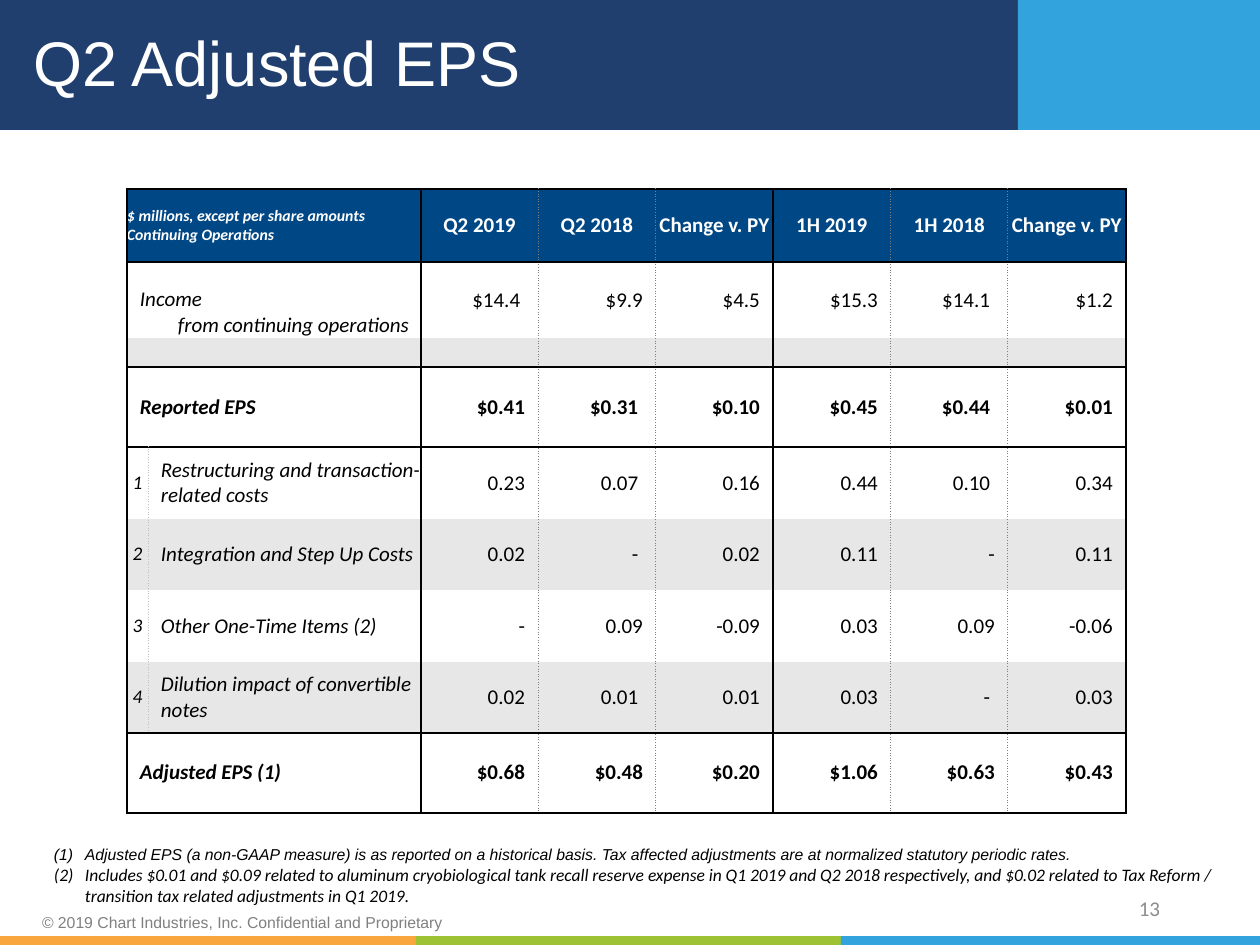
import pptx
import pptx.dml.color
import pptx.enum.shapes
import pptx.enum.text
import pptx.oxml
import pptx.oxml.ns
import pptx.util

PX = 914400 / 126
ALIGN = pptx.enum.text.PP_ALIGN
ANCHOR = pptx.enum.text.MSO_ANCHOR

NAVY, SKY, HEADER_BLUE = "203F6E", "33A3DD", "004785"
BLACK, WHITE, STRIPE = "000000", "FFFFFF", "E7E7E7"
SOLID = (BLACK, 1, "solid")
DOTTED = ("808080", 0.5, "sysDot")
PALE_DOTTED = ("BFBFBF", 0.5, "sysDot")

COLUMN_WIDTHS = [21, 273] + [117, 118] * 3
ROW_HEIGHTS = [73, 76, 29, 80, 72, 71, 72, 71, 80]
ADJUSTMENT_ROWS = range(4, 8)
STRIPED_ROWS = (2, 5, 7)
RULED_LINES = (0, 1, 3, 4, 8, 9)
SOLID_COLUMN_LINES = (0, 2, 5, 8)
BOLD_ROWS = (0, 3, 8)

EPS_ROWS = [
    ("", "$ millions, except per share amounts\nContinuing Operations",
     "Q2 2019", "Q2 2018", "Change v. PY", "1H 2019", "1H 2018", "Change v. PY"),
    ("", "Income\nfrom continuing operations",
     "$14.4 ", "$9.9", "$4.5", "$15.3", "$14.1 ", "$1.2"),
    ("",) * 8,
    ("", "Reported EPS", "$0.41", "$0.31 ", "$0.10", "$0.45", "$0.44 ", "$0.01"),
    ("1", "Restructuring and transaction-related costs",
     "0.23", "0.07 ", "0.16", "0.44", "0.10 ", "0.34"),
    ("2", "Integration and Step Up Costs", "0.02", "- ", "0.02", "0.11", "-", "0.11"),
    ("3", "Other One-Time Items (2)", "-", "0.09", "-0.09", "0.03", "0.09", "-0.06"),
    ("4", "Dilution impact of convertible notes",
     "0.02", "0.01 ", "0.01", "0.03", "- ", "0.03"),
    ("", "Adjusted EPS (1)", "$0.68", "$0.48", "$0.20", "$1.06", "$0.63", "$0.43"),
]


def emu(px):
    """Turn px into EMU."""
    return pptx.util.Emu(round(px * PX))


def rgb(value):
    """Turn a hex string into a colour."""
    return pptx.dml.color.RGBColor.from_string(value)


def write(paragraph, text, *, size=12, color=BLACK, font="Calibri", bold=False,
          italic=False, align=ALIGN.LEFT, spacing=None, indent=0):
    """Add one formatted run to a paragraph, or size an empty one."""
    paragraph.alignment = align
    if spacing:
        paragraph.line_spacing = spacing
    if indent:
        paragraph._p.get_or_add_pPr().set("marL", str(emu(indent)))
    if not text:
        paragraph._p.get_or_add_endParaRPr().set("sz", str(size * 100))
        return
    run = paragraph.add_run()
    run.text = text
    run.font.size = pptx.util.Pt(size)
    run.font.name = font
    run.font.bold = bold
    run.font.italic = italic
    run.font.color.rgb = rgb(color)


def add_box(slide, left, top, width, height, inset=(13, 6), anchor=ANCHOR.MIDDLE):
    """Add a wrapping text box and return its frame."""
    frame = slide.shapes.add_textbox(emu(left), emu(top), emu(width), emu(height)).text_frame
    frame.word_wrap = True
    frame.vertical_anchor = anchor
    frame.margin_left = frame.margin_right = emu(inset[0])
    frame.margin_top = frame.margin_bottom = emu(inset[1])
    return frame


def add_band(slide, left, top, width, height, color):
    """Add a plain filled rectangle."""
    band = slide.shapes.add_shape(
        pptx.enum.shapes.MSO_SHAPE.RECTANGLE, emu(left), emu(top), emu(width), emu(height))
    band.shadow.inherit = False
    band.fill.solid()
    band.fill.fore_color.rgb = rgb(color)
    band.line.fill.background()


def add_header(slide, left, top, width, height):
    """Draw the title band with its accent block."""
    accent = 242
    add_band(slide, left, top, width, height, NAVY)
    add_band(slide, left + width - accent, top, accent, height, SKY)
    title = add_box(slide, left + 21, top + 11, 987, 110)
    write(title.paragraphs[0], "Q2 Adjusted EPS", size=36, color=WHITE, font="Arial", spacing=0.9)


def add_footer(slide, left, top, width, height):
    """Draw the copyright line, page number and colour strip."""
    copyright_line = add_box(slide, left + 29, top, 437, 23, inset=(13, 3))
    write(copyright_line.paragraphs[0],
          "© 2019 Chart Industries, Inc. Confidential and Proprietary",
          size=9, color="808080", font="Arial")
    page_number = add_box(slide, left + 890, top - 28, 283, 50)
    write(page_number.paragraphs[0], "13", color="8C8C8C", align=ALIGN.RIGHT)
    strip = 9
    stops = [0, 416, 841, width]
    for start, end, color in zip(stops, stops[1:], ("F9A63F", "9DC335", SKY)):
        add_band(slide, left + start, top + height - strip, end - start, strip, color)


def add_footnotes(slide, left, top, width, height):
    """Write the numbered footnotes."""
    frame = add_box(slide, left, top, width, height, inset=(6, 6), anchor=ANCHOR.TOP)
    notes = [
        ("Adjusted EPS (a non-GAAP measure) is as reported on a historical basis. "
         "Tax affected adjustments are at normalized statutory periodic rates.", 9, "Arial"),
        ("Includes $0.01 and $0.09 related to aluminum cryobiological tank recall reserve "
         "expense in Q1 2019 and Q2 2018 respectively, and $0.02 related to Tax Reform / "
         "transition tax related adjustments in Q1 2019.", 10, "Calibri"),
    ]
    for index, (note, size, font) in enumerate(notes):
        paragraph = frame.add_paragraph() if index else frame.paragraphs[0]
        properties = paragraph._p.get_or_add_pPr()
        properties.set("indent", str(-emu(31)))
        properties.append(pptx.oxml.parse_xml(
            f'<a:buAutoNum {pptx.oxml.ns.nsdecls("a")} type="arabicParenBoth"/>'))
        write(paragraph, note, size=size, font=font, italic=True, indent=31)


def set_border(cell, side, pen):
    """Set one cell border from a colour, width and dash, or clear it."""
    color, points, dash = pen or (BLACK, 0, "solid")
    paint = f'<a:solidFill><a:srgbClr val="{color}"/></a:solidFill>' if pen else "<a:noFill/>"
    cell._tc.get_or_add_tcPr().append(pptx.oxml.parse_xml(
        f'<a:ln{side} {pptx.oxml.ns.nsdecls("a")} w="{round(points * 12700)}">'
        f'{paint}<a:prstDash val="{dash}"/></a:ln{side}>'))


def column_pen(row, line):
    """Choose the pen of a vertical line in one row."""
    if line in SOLID_COLUMN_LINES:
        return SOLID
    if line == 1:
        return PALE_DOTTED if row in ADJUSTMENT_ROWS else None
    return DOTTED


def style_cell(cell, row, column, span):
    """Set the borders, fill and margins of one cell."""
    set_border(cell, "L", column_pen(row, column))
    set_border(cell, "R", column_pen(row, column + span))
    set_border(cell, "T", SOLID if row in RULED_LINES else None)
    set_border(cell, "B", SOLID if row + 1 in RULED_LINES else None)
    cell.fill.solid()
    cell.fill.fore_color.rgb = rgb(
        HEADER_BLUE if row == 0 else STRIPE if row in STRIPED_ROWS else WHITE)
    is_label = column == 1 or span == 2
    cell.margin_left = emu(13 if is_label and row else 0)
    cell.margin_right = emu(13 if column > 1 and row else 0)
    cell.margin_top = cell.margin_bottom = 0
    cell.vertical_anchor = ANCHOR.BOTTOM if row == 1 and is_label else ANCHOR.MIDDLE


def write_cell(cell, row, column, text):
    """Write the lines of one cell in the format of its place."""
    is_label = column < 2
    if column > 1:
        align = ALIGN.RIGHT if row else ALIGN.CENTER
    else:
        align = ALIGN.CENTER if text.isdigit() else ALIGN.LEFT
    size = 9 if is_label and row == 0 else 11 if text.isdigit() else 12
    for index, line in enumerate(text.split("\n")):
        paragraph = cell.text_frame.add_paragraph() if index else cell.text_frame.paragraphs[0]
        write(paragraph, line, size=size, color=BLACK if row else WHITE, bold=row in BOLD_ROWS,
              italic=is_label, align=align, indent=38 if index and row else 0)


def add_eps_table(slide, left, top):
    """Build the table that leads from reported to adjusted EPS."""
    table = slide.shapes.add_table(
        len(ROW_HEIGHTS), len(COLUMN_WIDTHS), emu(left), emu(top),
        emu(sum(COLUMN_WIDTHS)), emu(sum(ROW_HEIGHTS))).table
    table.first_row = table.horz_banding = False
    for column, width in zip(table.columns, COLUMN_WIDTHS):
        column.width = emu(width)
    for row, (height, values) in enumerate(zip(ROW_HEIGHTS, EPS_ROWS)):
        table.rows[row].height = emu(height)
        merged = row not in ADJUSTMENT_ROWS
        if merged:
            table.cell(row, 0).merge(table.cell(row, 1))
            values = (values[1], "") + values[2:]
        for column, value in enumerate(values):
            cell = table.cell(row, column)
            style_cell(cell, row, column, 2 if merged and column == 0 else 1)
            write_cell(cell, row, column, value)


def main():
    """Build and save the slide."""
    deck = pptx.Presentation()
    deck.slide_width, deck.slide_height = emu(1260), emu(945)
    slide = deck.slides.add_slide(deck.slide_layouts[6])
    add_header(slide, 0, 0, 1260, 130)
    add_footer(slide, 0, 911, 1260, 34)
    add_footnotes(slide, 48, 839, 1212, 106)
    add_eps_table(slide, 127, 189)
    deck.save("out.pptx")


if __name__ == "__main__":
    main()
